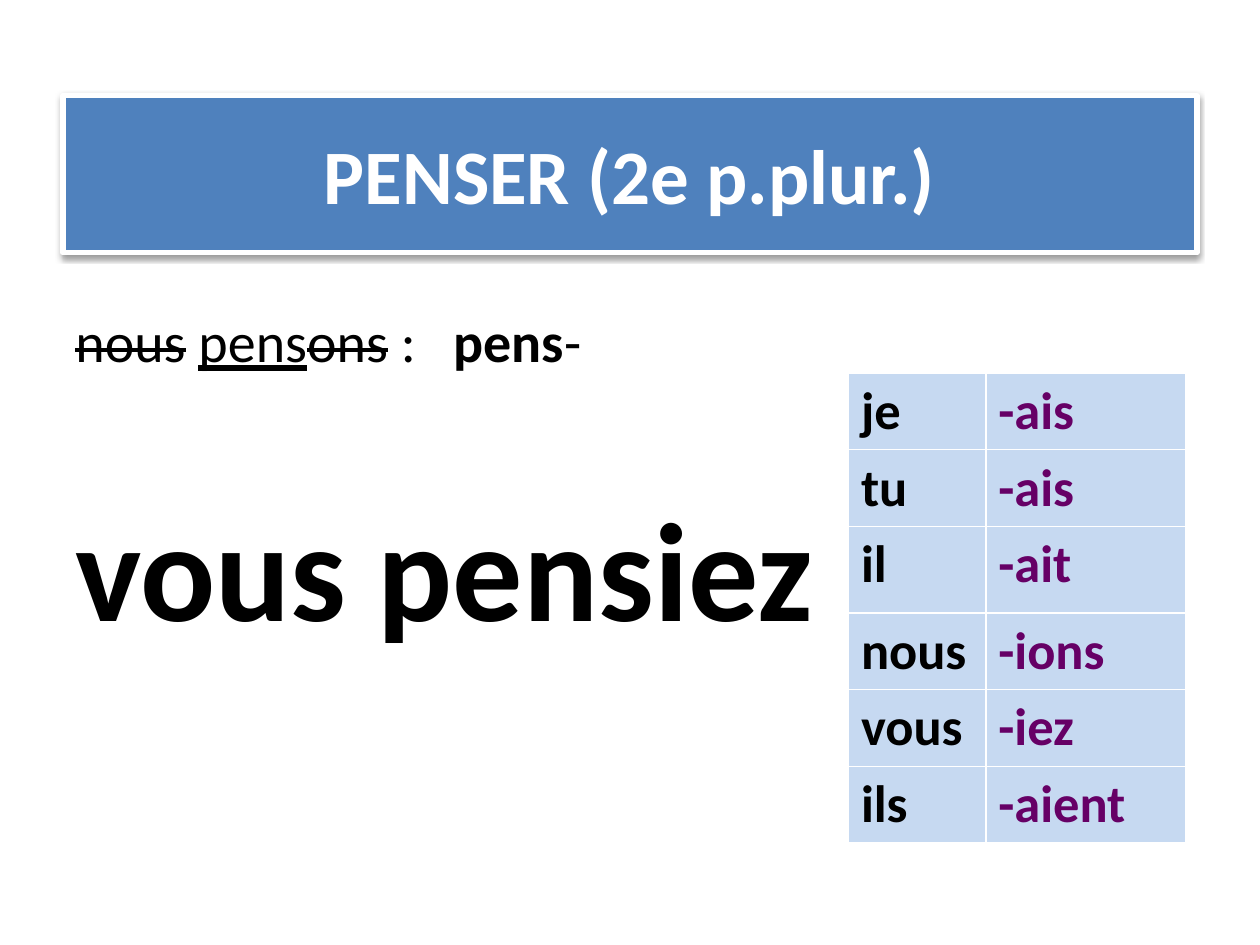
from lxml import etree
from pptx import Presentation
from pptx.dml.color import RGBColor
from pptx.enum.shapes import MSO_SHAPE
from pptx.enum.text import MSO_ANCHOR, PP_ALIGN
from pptx.oxml.ns import qn
from pptx.util import Pt

RECTANGLE = MSO_SHAPE.RECTANGLE
MIDDLE = MSO_ANCHOR.MIDDLE
CENTER = PP_ALIGN.CENTER
FONT = "Calibri"
COLORS = {
    "banner": "4F81BD",
    "white": "FFFFFF",
    "black": "000000",
    "cell": "C6D9F1",
    "ending": "660066",
}
ENDINGS = [
    ("je", "-ais"),
    ("tu", "-ais"),
    ("il", "-ait"),
    ("nous", "-ions"),
    ("vous", "-iez"),
    ("ils", "-aient"),
]


def color(name):
    return RGBColor.from_string(COLORS[name])


def add_run(paragraph, text, size, color_name="black", bold=False,
            underline=False, strike=False):
    run = paragraph.add_run()
    run.text = text
    font = run.font
    font.name, font.size, font.bold = FONT, Pt(size), bold
    font.color.rgb = color(color_name)
    if underline:
        font.underline = True
    if strike:
        run._r.get_or_add_rPr().set("strike", "sngStrike")


def add_solid(parent, color_name, alpha=None):
    """Append a colour element, optionally with opacity in percent."""
    element = etree.SubElement(parent, qn("a:srgbClr"), val=COLORS[color_name])
    if alpha is not None:
        etree.SubElement(element, qn("a:alpha"), val=str(alpha * 1000))


def add_shadow(shape, blur, distance, alpha):
    shape.shadow.inherit = False
    effects = shape._element.spPr.find(qn("a:effectLst"))
    shadow = etree.SubElement(
        effects, qn("a:outerShdw"), blurRad=str(Pt(blur)),
        dist=str(Pt(distance)), dir=str(90 * 60000), rotWithShape="0")
    add_solid(shadow, "black", alpha)


def set_borders(cell, color_name, width):
    properties = cell._tc.get_or_add_tcPr()
    for index, side in enumerate(("lnL", "lnR", "lnT", "lnB")):
        line = etree.Element(qn(f"a:{side}"), w=str(Pt(width)))
        add_solid(etree.SubElement(line, qn("a:solidFill")), color_name)
        properties.insert(index, line)


def add_banner(slide, left, top, width, height):
    banner = slide.shapes.add_shape(
        RECTANGLE, Pt(left), Pt(top), Pt(width), Pt(height))
    banner.fill.solid()
    banner.fill.fore_color.rgb = color("banner")
    banner.line.color.rgb = color("white")
    banner.line.width = Pt(3)
    add_shadow(banner, blur=3.1, distance=1.6, alpha=38)
    frame = banner.text_frame
    frame.word_wrap = True
    frame.vertical_anchor = MIDDLE
    paragraph = frame.paragraphs[0]
    paragraph.alignment = CENTER
    add_run(paragraph, "PENSER (2e p.plur.)", 44, "white", bold=True)


def add_conjugation(slide, left, top, width, height):
    box = slide.shapes.add_textbox(Pt(left), Pt(top), Pt(width), Pt(height))
    frame = box.text_frame
    frame.word_wrap = True
    frame.margin_top = Pt(49)

    # Stem taken from the "nous" form
    stem = frame.paragraphs[0]
    add_run(stem, "nous", 32, strike=True)
    add_run(stem, " ", 32)
    add_run(stem, "pens", 32, underline=True)
    add_run(stem, "ons", 32, strike=True)
    add_run(stem, " : \t", 32)
    add_run(stem, "pens", 32, bold=True)
    add_run(stem, "-", 32)

    # Conjugated form
    answer = frame.add_paragraph()
    answer.space_before = Pt(61.5)
    add_run(answer, "vous pensiez", 80, bold=True)


def add_endings_table(slide, left, top, width, height):
    pronoun_width, tall_row = 78.5, 49.5
    row_height = (height - tall_row) / (len(ENDINGS) - 1)
    table = slide.shapes.add_table(
        len(ENDINGS), 2, Pt(left), Pt(top), Pt(width), Pt(height)).table
    table.first_row = table.horz_banding = False
    table.columns[0].width = Pt(pronoun_width)
    table.columns[1].width = Pt(width - pronoun_width)
    for row, texts in enumerate(ENDINGS):
        table.rows[row].height = Pt(tall_row if texts[0] == "il" else row_height)
        for column, text in enumerate(texts):
            cell = table.cell(row, column)
            cell.fill.solid()
            cell.fill.fore_color.rgb = color("cell")
            set_borders(cell, "white", 1)
            add_run(cell.text_frame.paragraphs[0], text, 30,
                    ("black", "ending")[column], bold=True)


def main():
    presentation = Presentation()
    presentation.slide_width, presentation.slide_height = Pt(720), Pt(540)
    slide = presentation.slides.add_slide(presentation.slide_layouts[6])
    add_banner(slide, 36, 54.5, 648, 90)
    add_conjugation(slide, 36, 126, 648, 356.4)
    add_endings_table(slide, 484.8, 213.2, 193, 268.5)
    presentation.save("out.pptx")


if __name__ == "__main__":
    main()
